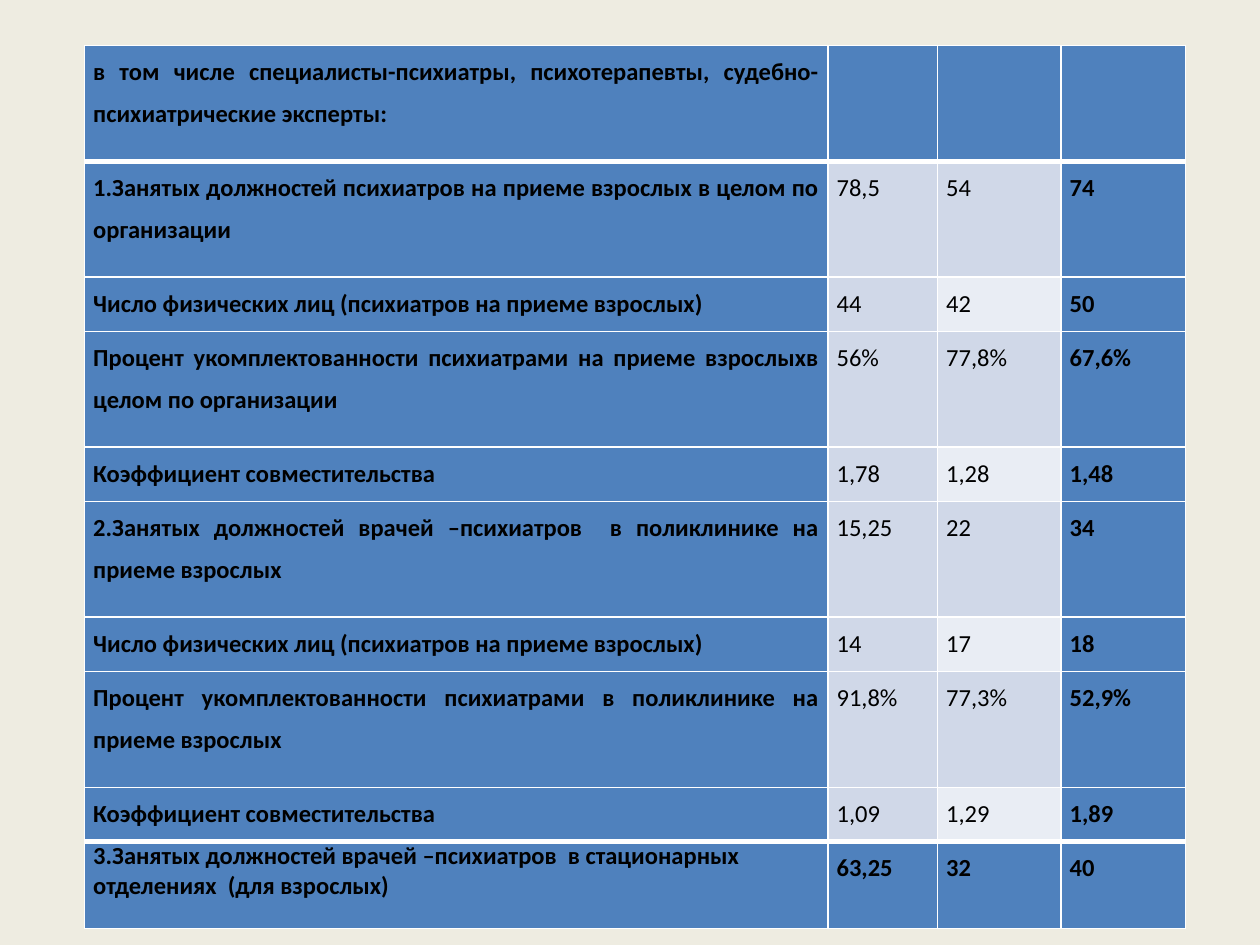
import pptx
import pptx.util
import pptx.dml.color
import pptx.enum.text
import lxml.etree

Inches, Pt = pptx.util.Inches, pptx.util.Pt
RGB = pptx.dml.color.RGBColor.from_string
ALIGN = pptx.enum.text.PP_ALIGN

COLORS = {"page": "EEECE1", "head": "4F81BD", "band": "D0D8E8",
          "pale": "E9EDF4", "line": "FFFFFF", "text": "000000"}
FONT = "Calibri"
LEFT, TOP = 0.67, 0.36
WIDTHS = [5.9, 0.87, 0.98, 0.99]
TALL, SHORT, LAST = 0.92, 0.43, 0.69

ROWS = [
    (TALL, "в том числе специалисты-психиатры, психотерапевты, судебно-психиатрические эксперты:", "", "", ""),
    (TALL, "1.Занятых должностей психиатров на приеме взрослых в целом по организации", "78,5", "54", "74"),
    (SHORT, "Число физических лиц (психиатров на приеме взрослых)", "44", "42", "50"),
    (TALL, "Процент укомплектованности психиатрами на приеме взрослыхв целом по организации", "56%", "77,8%", "67,6%"),
    (SHORT, "Коэффициент совместительства", "1,78", "1,28", "1,48"),
    (TALL, "2.Занятых должностей врачей –психиатров  в поликлинике на приеме взрослых", "15,25", "22", "34"),
    (SHORT, "Число физических лиц (психиатров на приеме взрослых)", "14", "17", "18"),
    (TALL, "Процент укомплектованности психиатрами в поликлинике на приеме взрослых", "91,8%", "77,3%", "52,9%"),
    (SHORT, "Коэффициент совместительства", "1,09", "1,29", "1,89"),
    (LAST, "3.Занятых должностей врачей –психиатров  в стационарных отделениях  (для взрослых)", "63,25", "32", "40"),
]
END = len(ROWS) - 1


def shade(row, col):
    if row in (0, END) or col in (0, 3):
        return "head"
    return "pale" if col == 2 and row % 2 == 0 else "band"


def edge(cell, row):
    """Draw white borders, thick below the first row and above the last."""
    props = cell._tc.get_or_add_tcPr()
    thick = {("B", 0), ("T", 1), ("B", END - 1), ("T", END)}
    for side in "LRTB":
        width = Pt(3 if (side, row) in thick else 1)
        line = lxml.etree.SubElement(props, pptx.oxml.ns.qn("a:ln" + side), w=str(width))
        fill = lxml.etree.SubElement(line, pptx.oxml.ns.qn("a:solidFill"))
        lxml.etree.SubElement(fill, pptx.oxml.ns.qn("a:srgbClr"), val=COLORS["line"])


def write(cell, text, bold, wide):
    cell.margin_left = cell.margin_right = Inches(0.07)
    cell.margin_top = cell.margin_bottom = 0
    cell.text_frame.text = text
    para = cell.text_frame.paragraphs[0]
    if wide:
        para.alignment = ALIGN.JUSTIFY
        para.line_spacing = 1.4
    font = para.runs[0].font
    font.name, font.size, font.bold = FONT, Pt(14), bold
    font.color.rgb = RGB(COLORS["text"])


def main():
    deck = pptx.Presentation()
    deck.slide_width, deck.slide_height = Inches(10), Inches(7.5)
    slide = deck.slides.add_slide(deck.slide_layouts[6])
    slide.background.fill.solid()
    slide.background.fill.fore_color.rgb = RGB(COLORS["page"])

    high = sum(row[0] for row in ROWS)
    table = slide.shapes.add_table(
        len(ROWS), len(WIDTHS), Inches(LEFT), Inches(TOP),
        Inches(sum(WIDTHS)), Inches(high)).table
    table.first_row = table.horz_banding = False
    for col, width in enumerate(WIDTHS):
        table.columns[col].width = Inches(width)

    for row, (height, *texts) in enumerate(ROWS):
        table.rows[row].height = Inches(height)
        for col, text in enumerate(texts):
            cell = table.cell(row, col)
            tone = shade(row, col)
            edge(cell, row)
            cell.fill.solid()
            cell.fill.fore_color.rgb = RGB(COLORS[tone])
            if text:
                write(cell, text, tone == "head", (row, col) != (END, 0))

    deck.save("out.pptx")


if __name__ == "__main__":
    main()
